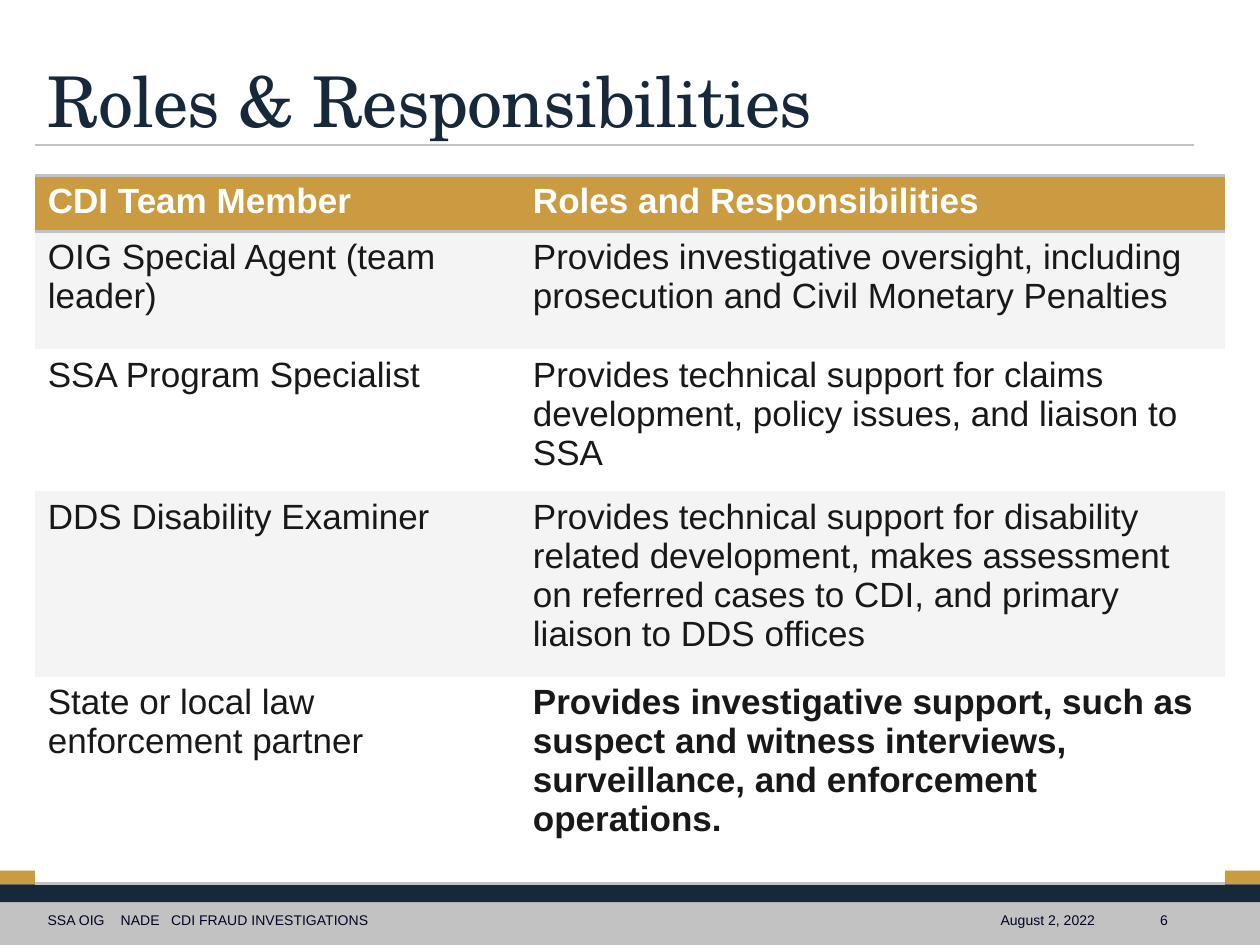
"""Build the Roles & Responsibilities slide on a grid of 100 columns by 75 rows."""
import dataclasses
import typing

import lxml.etree
import pptx
import pptx.dml.color
import pptx.enum.shapes
import pptx.enum.text
import pptx.oxml.ns
import pptx.util

UNIT = pptx.util.Inches(0.1)
COLS, ROWS = 100, 75
LEFT, WIDE = 2.8, 92
ALIGN = pptx.enum.text.PP_ALIGN
ANCHOR = pptx.enum.text.MSO_ANCHOR
qn = pptx.oxml.ns.qn


@dataclasses.dataclass(frozen=True)
class Theme:
    navy: str = "162839"
    gold: str = "CA9B40"
    gray: str = "C2C2C2"
    pale: str = "F4F4F4"
    white: str = "FFFFFF"
    ink: str = "181818"
    note: str = "000324"
    serif: str = "TeX Gyre Schola"
    sans: str = "Arial"
    head: int = 40
    body: int = 20
    small: int = 8
    rule: float = 0.75
    edge: int = 2


class Box(typing.NamedTuple):
    x: float
    y: float
    w: float
    h: float

    def emu(self) -> list[int]:
        return [span(n) for n in self]


class Band(typing.NamedTuple):
    y: float
    h: float
    color: str


class Note(typing.NamedTuple):
    text: str
    x: float
    w: float
    align: ALIGN = ALIGN.LEFT
    tabs: tuple[float, ...] = ()


class Row(typing.NamedTuple):
    high: float
    who: str
    role: str
    bold: tuple[bool, bool] = (False, False)


T = Theme()
BANDS = [Band(71.6, 3.4, T.gray), Band(69.1, 1.1, T.gold), Band(70.2, 1.4, T.navy)]
NOTES = [
    Note("August 2, 2022", 66.7, 21.2, ALIGN.RIGHT),
    Note("6", 91.1, 6.2),
    Note("SSA OIG\tNADE\tCDI FRAUD INVESTIGATIONS", LEFT, 60.7, tabs=(5.8, 9.8)),
]
TABLE = [
    Row(4.5, "CDI Team Member", "Roles and Responsibilities", (True, True)),
    Row(9.3, "OIG Special Agent (team leader)",
        "Provides investigative oversight, including prosecution and Civil Monetary Penalties"),
    Row(11.3, "SSA Program Specialist",
        "Provides technical support for claims development, policy issues, and liaison to SSA"),
    Row(14.7, "DDS Disability Examiner",
        "Provides technical support for disability related development, makes assessment "
        "on referred cases to CDI, and primary liaison to DDS offices"),
    Row(16.4, "State or local law enforcement partner",
        "Provides investigative support, such as suspect and witness interviews, "
        "surveillance, and enforcement operations.", (False, True)),
]


def span(n: float) -> int:
    return round(n * UNIT)


def rgb(color: str) -> pptx.dml.color.RGBColor:
    return pptx.dml.color.RGBColor.from_string(color)


def style(para, face: str, size: int, color: str, bold: bool = False) -> None:
    font = para.font
    font.name, font.size, font.bold = face, pptx.util.Pt(size), bold
    font.color.rgb = rgb(color)


def add_band(slide, band: Band) -> None:
    kind = pptx.enum.shapes.MSO_SHAPE.RECTANGLE
    shape = slide.shapes.add_shape(kind, *Box(0, band.y, COLS, band.h).emu())
    shape.shadow.inherit = False
    shape.fill.solid()
    shape.fill.fore_color.rgb = rgb(band.color)
    shape.line.fill.background()


def add_rule(slide, y: float) -> None:
    kind = pptx.enum.shapes.MSO_CONNECTOR.STRAIGHT
    line = slide.shapes.add_connector(kind, span(LEFT), span(y), span(LEFT + WIDE), span(y))
    line.line.color.rgb = rgb(T.gray)
    line.line.width = pptx.util.Pt(T.rule)
    lxml.etree.SubElement(line._element.spPr, qn("a:effectLst"))


def set_title(slide, text: str, box: Box) -> None:
    title = slide.shapes.title
    title.left, title.top, title.width, title.height = box.emu()
    frame = title.text_frame
    frame.text = text
    frame.word_wrap = True
    frame.auto_size = pptx.enum.text.MSO_AUTO_SIZE.NONE
    frame.vertical_anchor = ANCHOR.BOTTOM
    para = frame.paragraphs[0]
    para.alignment = ALIGN.LEFT
    para.line_spacing = 0.9
    style(para, T.serif, T.head, T.navy)
    para.font._rPr.set("spc", "-50")


def add_note(slide, note: Note) -> None:
    frame = slide.shapes.add_textbox(*Box(note.x, 71.3, note.w, 3.4).emu()).text_frame
    frame.text = note.text
    frame.word_wrap = True
    frame.vertical_anchor = ANCHOR.MIDDLE
    para = frame.paragraphs[0]
    para.alignment = note.align
    if note.tabs:
        stops = lxml.etree.SubElement(para._p.get_or_add_pPr(), qn("a:tabLst"))
        for stop in note.tabs:
            lxml.etree.SubElement(stops, qn("a:tab"), pos=str(span(stop)), algn="l")
    style(para, T.sans, T.small, T.note)


def add_edge(cell, side: str) -> None:
    line = lxml.etree.SubElement(cell._tc.get_or_add_tcPr(), qn(f"a:{side}"),
                                 w=str(pptx.util.Pt(T.edge)))
    fill = lxml.etree.SubElement(line, qn("a:solidFill"))
    lxml.etree.SubElement(fill, qn("a:srgbClr"), val=T.gray)


def add_table(slide, rows: list[Row], x: float, y: float, wide: list[float]) -> None:
    box = Box(x, y, sum(wide), sum(row.high for row in rows))
    table = slide.shapes.add_table(len(rows), len(wide), *box.emu()).table
    plain = "{2D5ABB26-0587-4C30-8999-92F81FD0307C}"
    table._tbl.tblPr.find(qn("a:tableStyleId")).text = plain
    for col, w in zip(table.columns, wide):
        col.width = span(w)
    for i, row in enumerate(rows):
        table.rows[i].height = span(row.high)
        sides = ["lnT", "lnB"] if i == 0 else ["lnB"] if i == len(rows) - 1 else []
        fill = T.gold if i == 0 else T.pale if i % 2 else T.white
        for j, text in enumerate((row.who, row.role)):
            cell = table.cell(i, j)
            cell.text = text
            for side in sides:
                add_edge(cell, side)
            cell.fill.solid()
            cell.fill.fore_color.rgb = rgb(fill)
            ink = T.ink if i else T.white
            style(cell.text_frame.paragraphs[0], T.sans, T.body, ink, row.bold[j])


def main() -> None:
    deck = pptx.Presentation()
    deck.slide_width, deck.slide_height = span(COLS), span(ROWS)
    slide = deck.slides.add_slide(deck.slide_layouts[5])
    for band in BANDS:
        add_band(slide, band)
    add_rule(slide, 11.5)
    set_title(slide, "Roles & Responsibilities", Box(LEFT, 3.3, WIDE, 8.5))
    add_table(slide, TABLE, LEFT, 13.9, [38.5, 55.9])
    for note in NOTES:
        add_note(slide, note)
    deck.save("out.pptx")


if __name__ == "__main__":
    main()
